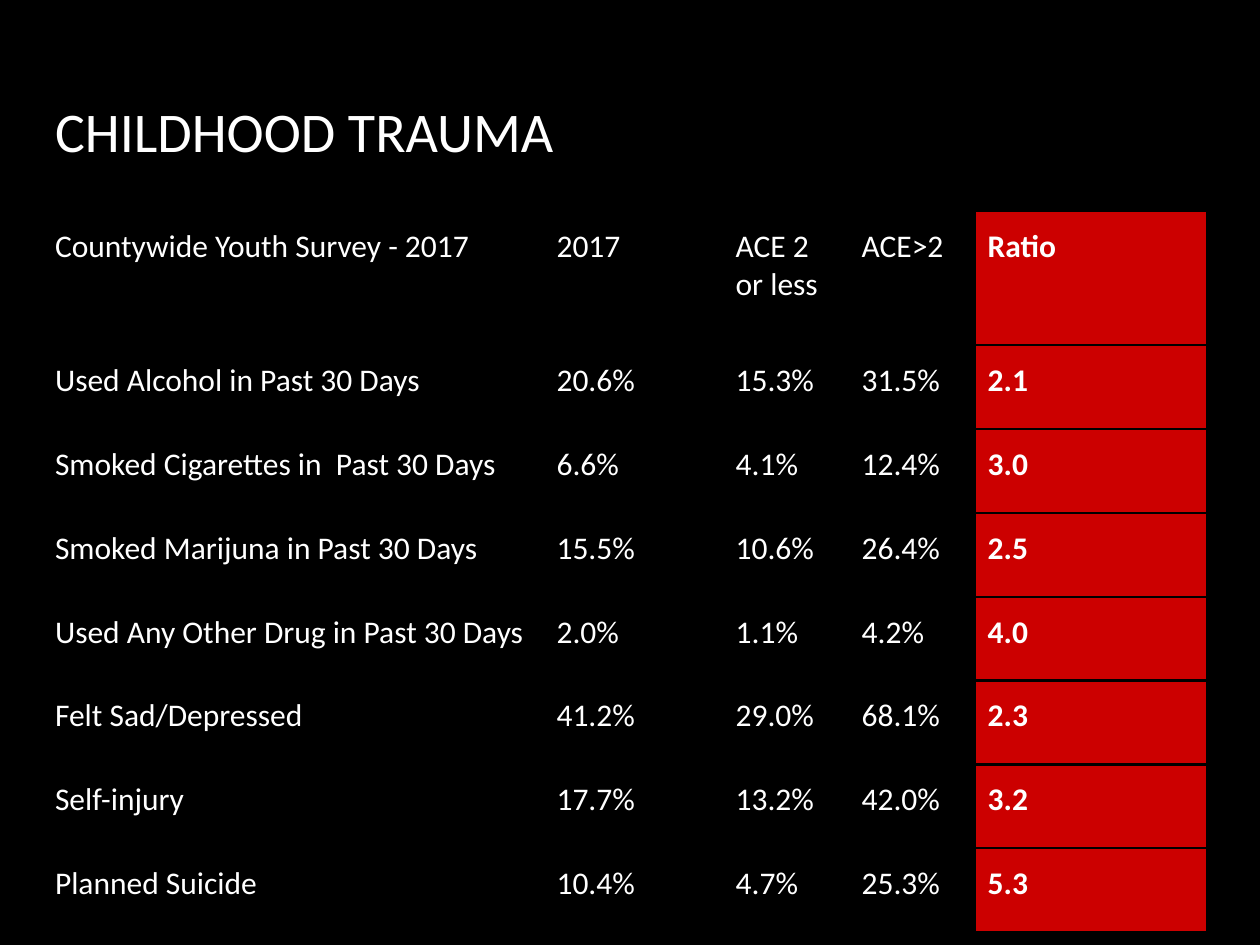
from lxml.etree import SubElement
from pptx import Presentation
from pptx.dml.color import RGBColor
from pptx.enum.text import MSO_ANCHOR
from pptx.oxml.ns import qn
from pptx.util import Cm, Pt

BLACK, WHITE, RED = "000000", "FFFFFF", "CC0000"
COLUMN_WIDTHS = [10.11, 3.61, 2.54, 2.54, 4.67]
HEADER_HEIGHT, ROW_HEIGHT = 2.71, 1.69
SURVEY_ROWS = [
    ["Countywide Youth Survey - 2017", "2017", "ACE 2 or less", "ACE>2", "Ratio"],
    ["Used Alcohol in Past 30 Days", "20.6%", "15.3%", "31.5%", "2.1"],
    ["Smoked Cigarettes in  Past 30 Days", "6.6%", "4.1%", "12.4%", "3.0"],
    ["Smoked Marijuna in Past 30 Days", "15.5%", "10.6%", "26.4%", "2.5"],
    ["Used Any Other Drug in Past 30 Days", "2.0%", "1.1%", "4.2%", "4.0"],
    ["Felt Sad/Depressed", "41.2%", "29.0%", "68.1%", "2.3"],
    ["Self-injury", "17.7%", "13.2%", "42.0%", "3.2"],
    ["Planned Suicide", "10.4%", "4.7%", "25.3%", "5.3"],
]


def paint(target, color):
    target.fore_color.rgb = RGBColor.from_string(color)


def style_text(frame, size, bold=False):
    for para in frame.paragraphs:
        for span in para.runs:
            span.font.name = "Calibri"
            span.font.size = Pt(size)
            span.font.bold = bold
            span.font.color.rgb = RGBColor.from_string(WHITE)


def add_borders(cell, color, width):
    properties = cell._tc.get_or_add_tcPr()
    for position, side in enumerate(["lnL", "lnR", "lnT", "lnB"]):
        line = SubElement(properties, qn(f"a:{side}"), w=str(Pt(width)))
        fill = SubElement(line, qn("a:solidFill"))
        SubElement(fill, qn("a:srgbClr"), val=color)
        properties.insert(position, line)


def add_title(page, left, top, width, height):
    box = page.shapes.add_textbox(Cm(left), Cm(top), Cm(width), Cm(height))
    frame = box.text_frame
    frame.word_wrap = True
    frame.vertical_anchor = MSO_ANCHOR.MIDDLE
    frame.margin_left = frame.margin_right = Cm(0.25)
    frame.margin_top = frame.margin_bottom = Cm(0.25)
    frame.text = "CHILDHOOD TRAUMA"
    frame.paragraphs[0].line_spacing = 0.9
    style_text(frame, 32)


def fill_cell(cell, text, is_ratio):
    cell.text_frame.text = text
    style_text(cell.text_frame, 18, is_ratio)
    cell.margin_left = cell.margin_right = Cm(0.25)
    cell.margin_top = cell.margin_bottom = Cm(0.33)
    if is_ratio:
        cell.fill.solid()
        paint(cell.fill, RED)
    else:
        cell.fill.background()
    add_borders(cell, BLACK, 1.5)


def add_survey_table(page, left, top, width, height):
    table = page.shapes.add_table(
        len(SURVEY_ROWS), len(COLUMN_WIDTHS), Cm(left), Cm(top), Cm(width), Cm(height)
    ).table
    table.first_row = table.horz_banding = False
    for column, column_width in zip(table.columns, COLUMN_WIDTHS):
        column.width = Cm(column_width)
    for row_index, values in enumerate(SURVEY_ROWS):
        table.rows[row_index].height = Cm(ROW_HEIGHT if row_index else HEADER_HEIGHT)
        for column_index, text in enumerate(values):
            is_ratio = column_index == len(values) - 1
            fill_cell(table.cell(row_index, column_index), text, is_ratio)


def main():
    deck = Presentation()
    deck.slide_width, deck.slide_height = Cm(25.4), Cm(19.05)
    page = deck.slides.add_slide(deck.slide_layouts[6])
    page.background.fill.solid()
    paint(page.background.fill, BLACK)
    table_height = HEADER_HEIGHT + ROW_HEIGHT * (len(SURVEY_ROWS) - 1)
    add_survey_table(page, 0.86, 4.25, sum(COLUMN_WIDTHS), table_height)
    add_title(page, 0.86, 1.65, 23.67, 2.13)
    deck.save("out.pptx")


if __name__ == "__main__":
    main()
